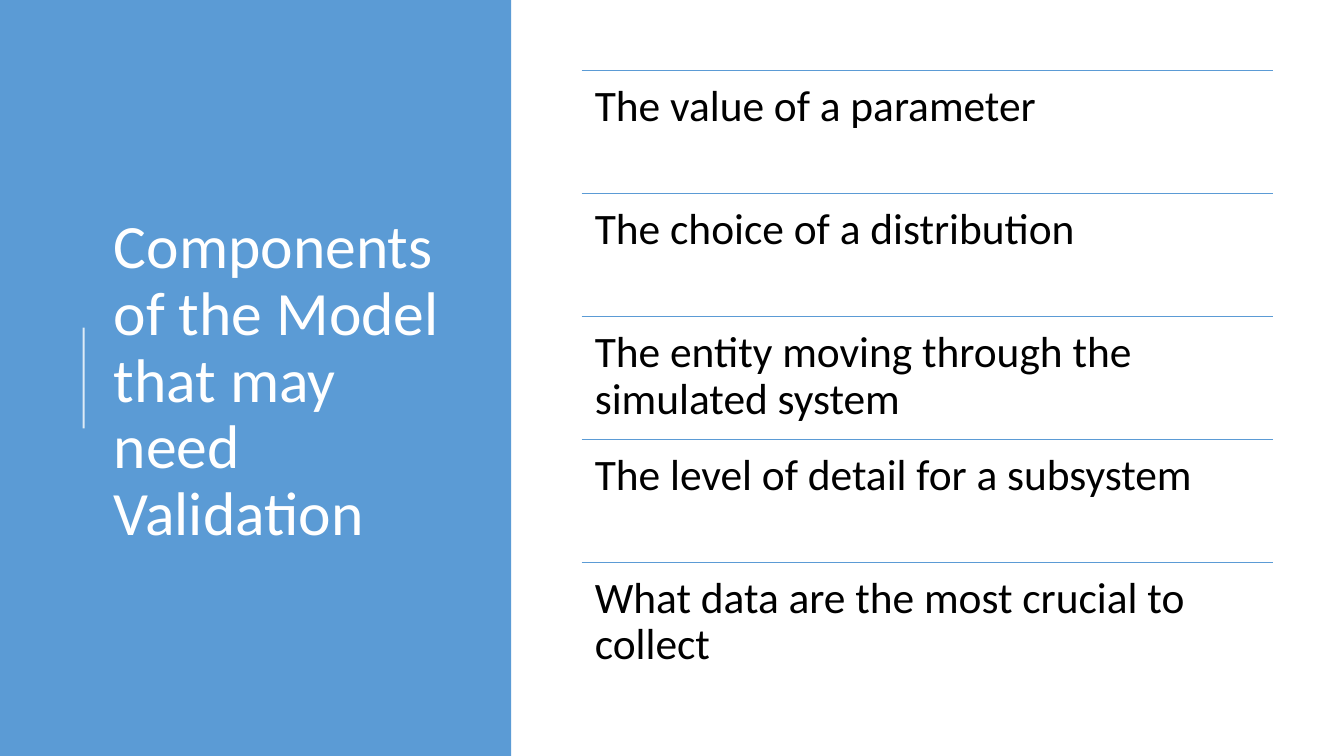
from lxml.etree import SubElement
from pptx import Presentation
from pptx.dml.color import RGBColor
from pptx.enum.shapes import MSO_CONNECTOR, MSO_SHAPE
from pptx.enum.text import MSO_ANCHOR
from pptx.oxml.ns import qn
from pptx.util import Pt

PX = 9144  # 100 px to the inch
COLORS = {"blue": "5B9BD5", "white": "FFFFFF", "black": "000000"}

COMPONENTS = [
    "The value of a parameter",
    "The choice of a distribution",
    "The entity moving through the simulated system",
    "The level of detail for a subsystem",
    "What data are the most crucial to collect",
]
LIST_LEFT, LIST_TOP, LIST_WIDTH, ROW_HEIGHT = 577, 70, 686, 122


def add_text(slide, text, box, size, color, frame_format):
    shape = slide.shapes.add_textbox(*(value * PX for value in box))
    frame = shape.text_frame
    for name, value in frame_format.items():
        setattr(frame, name, value)
    paragraph = frame.paragraphs[0]
    paragraph.text = text
    paragraph.line_spacing = 0.9
    for name, value in {"name": "Calibri", "size": Pt(size)}.items():
        setattr(paragraph.font, name, value)
    paragraph.font.color.rgb = RGBColor.from_string(COLORS[color])


def add_line(slide, ends, color, width):
    connector = slide.shapes.add_connector(
        MSO_CONNECTOR.STRAIGHT, *(value * PX for value in ends))
    connector.line.color.rgb = RGBColor.from_string(COLORS[color])
    connector.line.width = Pt(width)
    SubElement(connector._element.spPr, qn("a:effectLst"))
    return connector


presentation = Presentation()
presentation.slide_width = 1333 * PX
presentation.slide_height = 750 * PX
slide = presentation.slides.add_slide(presentation.slide_layouts[6])

# Blue panel
panel = slide.shapes.add_shape(MSO_SHAPE.RECTANGLE, 0, 0, 507 * PX, 750 * PX)
panel.shadow.inherit = False
panel.fill.solid()
panel.fill.fore_color.rgb = RGBColor.from_string(COLORS["blue"])
panel.line.fill.background()

# Translucent accent line beside the title
accent = add_line(slide, (83, 425, 83, 325), "white", 1.5)
accent_color = accent._element.spPr.find(".//" + qn("a:srgbClr"))
SubElement(accent_color, qn("a:alpha"), val="80000")

# Title
add_text(slide, "Components of the Model that may need Validation",
         (103, 78, 369, 602), 44, "white",
         {"word_wrap": True, "vertical_anchor": MSO_ANCHOR.MIDDLE})

# Ruled list of components
margins = {f"margin_{side}": 13 * PX for side in ("left", "top", "right", "bottom")}
for row, component in enumerate(COMPONENTS):
    top = LIST_TOP + row * ROW_HEIGHT
    add_line(slide, (LIST_LEFT, top, LIST_LEFT + LIST_WIDTH, top), "blue", 1)
    add_text(slide, component, (LIST_LEFT, top, LIST_WIDTH, ROW_HEIGHT), 31, "black",
             {"word_wrap": True, "vertical_anchor": MSO_ANCHOR.TOP, **margins})

presentation.save("out.pptx")
